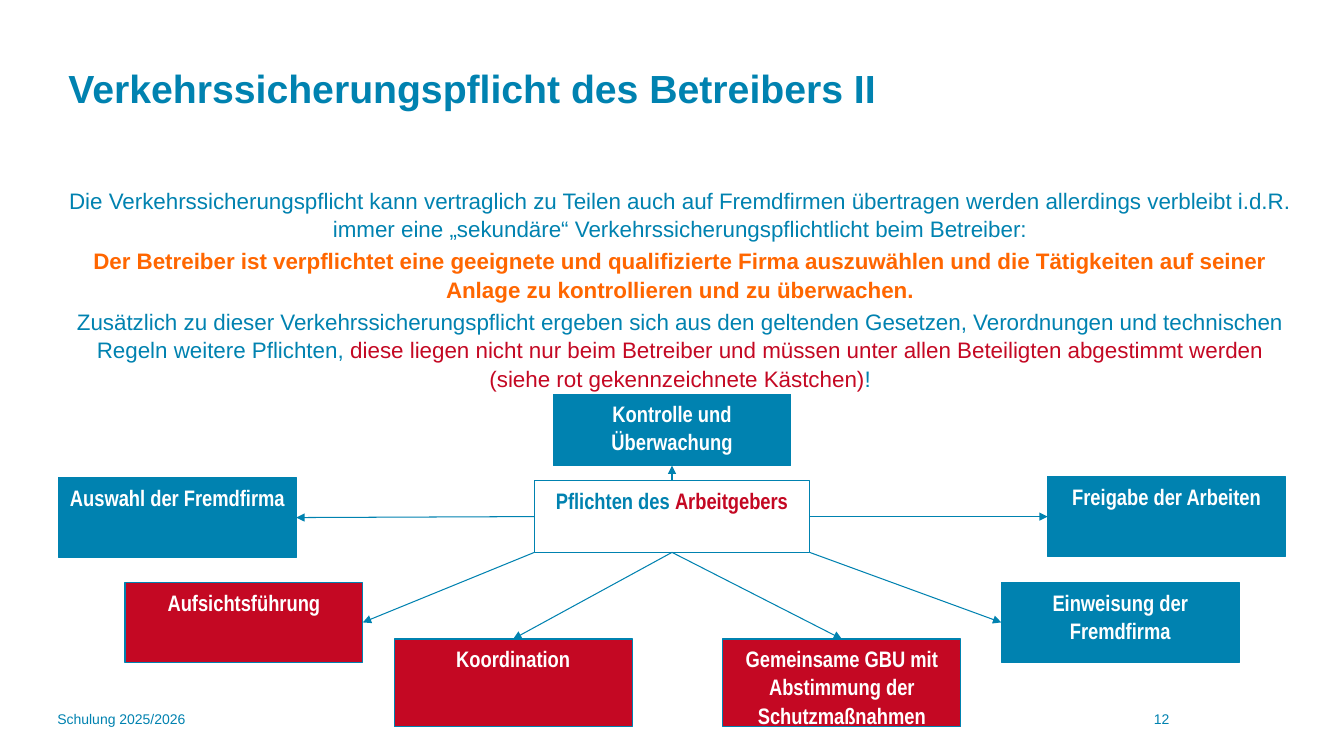
"""Build the slide on the operator's duty to ensure safety."""
from lxml import etree
from pptx import Presentation
from pptx import util as u
from pptx.dml.color import RGBColor
from pptx.enum import shapes, text
from pptx.oxml.ns import qn

BLUE, RED, ORANGE, WHITE = "0082B0", "C40823", "FF6600", "FFFFFF"
WIDTH, HEIGHT = u.Inches(13.33), u.Inches(7.5)
LEFT, CENTER = text.PP_ALIGN.LEFT, text.PP_ALIGN.CENTER
TOP, MIDDLE = text.MSO_ANCHOR.TOP, text.MSO_ANCHOR.MIDDLE

TITLE = [[("Verkehrssicherungspflicht des Betreibers II", BLUE)]]
FOOTER = [[("Schulung 2025/2026", BLUE)]]
NUMBER = [[("12", BLUE)]]
BODY = [
    [("Die Verkehrssicherungspflicht kann vertraglich zu Teilen auch auf Fremdfirmen "
      "übertragen werden allerdings verbleibt i.d.R. immer eine „sekundäre“ "
      "Verkehrssicherungspflichtlicht beim Betreiber:", BLUE)],
    [("Der Betreiber ist verpflichtet eine geeignete und qualifizierte Firma auszuwählen und "
      "die Tätigkeiten auf seiner Anlage zu kontrollieren und zu überwachen.", ORANGE)],
    [("Zusätzlich zu dieser Verkehrssicherungspflicht ergeben sich aus den geltenden Gesetzen, "
      "Verordnungen und technischen Regeln weitere Pflichten, ", BLUE),
     ("diese liegen nicht nur beim Betreiber und müssen unter allen Beteiligten abgestimmt "
      "werden (siehe rot gekennzeichnete Kästchen)", RED), ("!", BLUE)],
]
HUB = [[("Pflichten des ", BLUE), ("Arbeitgebers", RED)]]
HUB_AREA = (0.3976, 0.636, 0.2048, 0.0947)
DUTY_WIDTH = 0.177
# label, fill, centre, top, height, anchor on the hub, anchor on the duty
DUTIES = [
    ("Kontrolle und Überwachung", BLUE, 0.5, 0.5213, 0.0947, (0.5, 0), (0.5, 1)),
    ("Auswahl der Fremdfirma", BLUE, 0.132, 0.632, 0.1053, (0, 0.5), (1, 0.5)),
    ("Freigabe der Arbeiten", BLUE, 0.868, 0.6307, 0.1053, (1, 0.5), (0, 0.5)),
    ("Aufsichtsführung", RED, 0.1815, 0.7707, 0.1053, (0, 1), (1, 0.5)),
    ("Einweisung der Fremdfirma", BLUE, 0.8335, 0.7707, 0.1053, (1, 1), (0, 0.5)),
    ("Koordination", RED, 0.3818, 0.8453, 0.116, (0.5, 1), (0.5, 0)),
    ("Gemeinsame GBU mit Abstimmung der Schutzmaßnahmen", RED,
     0.6264, 0.8453, 0.116, (0.5, 1), (0.5, 0)),
]


def color(value):
    return RGBColor.from_string(value)


def place(area):
    left, top, width, height = area
    return int(left * WIDTH), int(top * HEIGHT), int(width * WIDTH), int(height * HEIGHT)


def write(box, lines, size, font="Arial", bold=(), align=CENTER, anchor=TOP, spacing=1.0):
    frame = box.text_frame
    frame.word_wrap = True
    frame.vertical_anchor = anchor
    for index, line in enumerate(lines):
        para = frame.add_paragraph() if index else frame.paragraphs[0]
        para.alignment = align
        para.line_spacing = spacing
        if index:
            para.space_before = u.Pt(size * 0.2)
        para.font.name, para.font.size = font, u.Pt(size)
        para.font.bold = index in bold
        for words, shade in line:
            span = para.add_run()
            span.text = words
            span.font.color.rgb = color(shade)


def add_text(page, area, lines, size, **style):
    write(page.shapes.add_textbox(*place(area)), lines, size, **style)


def add_box(page, area, lines, fill):
    box = page.shapes.add_shape(shapes.MSO_SHAPE.RECTANGLE, *place(area))
    box.shadow.inherit = False
    box.fill.solid()
    box.fill.fore_color.rgb = color(fill)
    box.line.color.rgb = color(BLUE)
    box.line.width = u.Pt(0.75)
    write(box, lines, 16, font="Arial Narrow", bold=(0,), spacing=1.05)
    return box


def anchor_point(box, share):
    return int(box.left + share[0] * box.width), int(box.top + share[1] * box.height)


def add_arrow(page, start, end):
    arrow = page.shapes.add_connector(shapes.MSO_CONNECTOR.STRAIGHT, *start, *end)
    arrow.line.color.rgb = color(BLUE)
    arrow.line.width = u.Pt(0.75)
    etree.SubElement(arrow.line._get_or_add_ln(), qn("a:tailEnd"), type="triangle")
    etree.SubElement(arrow._element.spPr, qn("a:effectLst"))


def main():
    deck = Presentation()
    deck.slide_width, deck.slide_height = WIDTH, HEIGHT
    page = deck.slides.add_slide(deck.slide_layouts[6])
    add_text(page, (0.0435, 0.0333, 0.6377, 0.1667), TITLE, 28,
             bold=(0,), align=LEFT, anchor=MIDDLE)
    add_text(page, (0.0353, 0.9333, 0.2438, 0.0667), FOOTER, 10, align=LEFT)
    add_text(page, (0.76, 0.9333, 0.2086, 0.0667), NUMBER, 10)
    add_text(page, (0.0435, 0.2387, 0.925, 0.6613), BODY, 16, bold=(1,), spacing=1.05)
    hub = add_box(page, HUB_AREA, HUB, WHITE)
    for label, fill, centre, top, height, leave, reach in DUTIES:
        area = (centre - DUTY_WIDTH / 2, top, DUTY_WIDTH, height)
        duty = add_box(page, area, [[(label, WHITE)]], fill)
        add_arrow(page, anchor_point(hub, leave), anchor_point(duty, reach))
    deck.save("out.pptx")


if __name__ == "__main__":
    main()
